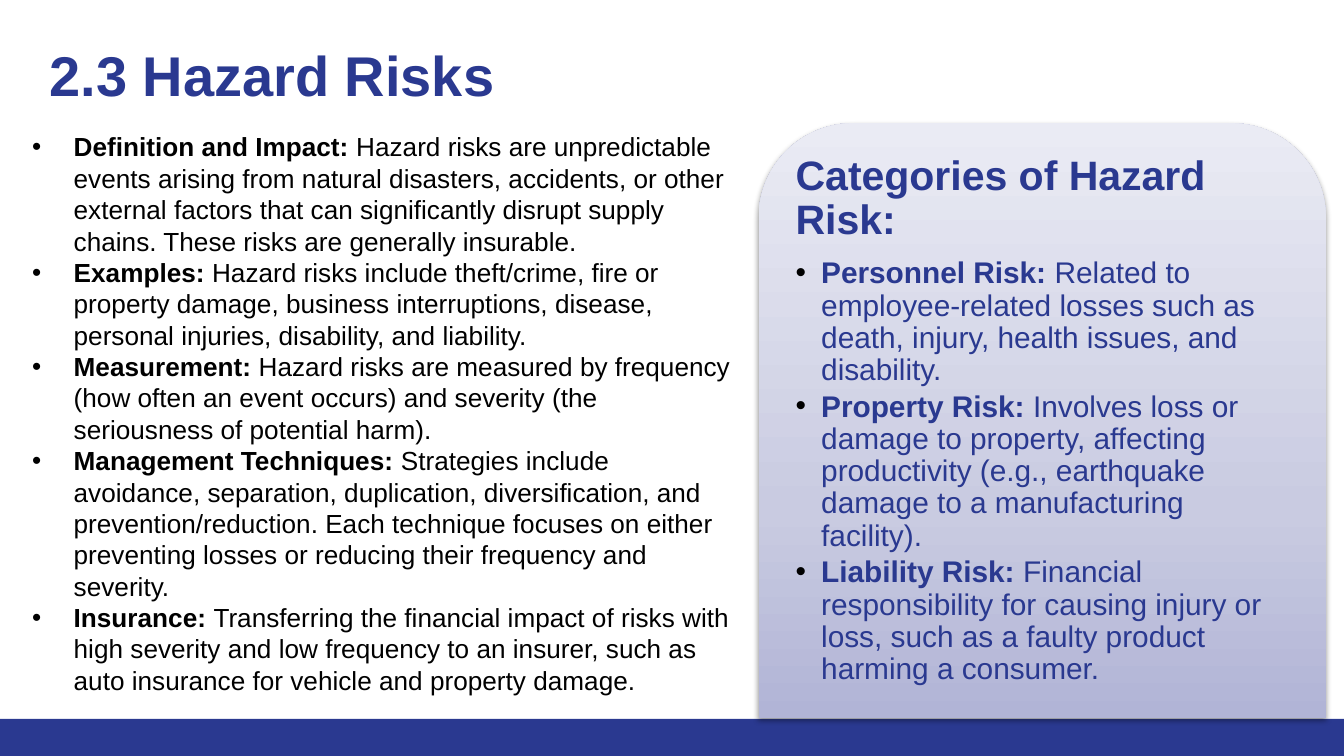
"""Build the slide on hazard risks: points on the left, a card of categories on the right."""
import copy
import pptx
import pptx.dml.color
import pptx.enum.shapes
import pptx.enum.text
import pptx.oxml
import pptx.oxml.ns
import pptx.util

HUES = {"navy": "2A3990", "black": "000000", "low": "B1B4D6", "mid": "C9CBE1", "high": "EAEBF4"}
tone = {name: pptx.dml.color.RGBColor.from_string(code) for name, code in HUES.items()}
kinds = pptx.enum.shapes.MSO_SHAPE
space = pptx.oxml.ns.nsdecls("a")

deck = pptx.Presentation()
deck.slide_width = pptx.util.Inches(10)
deck.slide_height = pptx.util.Inches(5.625)
col, row = deck.slide_width / 100, deck.slide_height / 100
slide = deck.slides.add_slide(deck.slide_layouts[6])


def place(left, top, width, height):
    return [int(n) for n in (left * col, top * row, width * col, height * row)]


def write(para, parts, size, hue, dent=0):
    if dent:
        props = para._p.get_or_add_pPr()
        props.set("marL", str(int(dent * col)))
        props.set("indent", str(int(-dent * col)))
        for mark in (f'<a:buClr {space}><a:srgbClr val="{HUES["black"]}"/></a:buClr>',
                     f'<a:buFont {space} typeface="Arial"/>', f'<a:buChar {space} char="•"/>'):
            props.append(pptx.oxml.parse_xml(mark))
    font = para.font
    font.name, font.size = "Arial", pptx.util.Pt(size)
    font.color.rgb = tone[hue]
    for spot, words in enumerate(parts):
        run = para.add_run()
        run.text = words
        run.font.bold = spot == 0


band = slide.shapes.add_shape(kinds.RECTANGLE, *place(0, 95.1, 100, 4.9))
band.shadow.inherit = False
band.fill.solid()
band.fill.fore_color.rgb = tone["navy"]
band.line.fill.background()

card = slide.shapes.add_shape(kinds.ROUND_2_SAME_RECTANGLE, *place(56.45, 16.3, 42.2, 78.7))
card.shadow.inherit = False
card.line.fill.background()
card.fill.gradient()
card.fill.gradient_angle = 90
first = card.fill.gradient_stops[0]._gs
first.addnext(copy.deepcopy(first))
for stop, hue, share in zip(card.fill.gradient_stops, ("low", "mid", "high"), (0, 0.35, 1)):
    stop.color.rgb = tone[hue]
    stop.position = share
glow = card._element.spPr.find(pptx.oxml.ns.qn("a:effectLst"))
glow.append(pptx.oxml.parse_xml(
    f'<a:outerShdw {space} blurRad="39400" dist="20300" dir="5400000" rotWithShape="0">'
    f'<a:srgbClr val="{HUES["black"]}"><a:alpha val="38000"/></a:srgbClr></a:outerShdw>'))

frames = []
for spot, pads in (((2.7, 3.6, 92, 15.8), (1, 1.7)),
                   ((1.4, 16.4, 54.1, 77.2), (1, 0.9)),
                   ((58.5, 20.1, 38.1, 74.8), (0.7, 0.4))):
    frame = slide.shapes.add_textbox(*place(*spot)).text_frame
    frame.word_wrap = True
    frame.vertical_anchor = pptx.enum.text.MSO_ANCHOR.TOP
    frame.margin_left = frame.margin_right = int(pads[0] * col)
    frame.margin_top = frame.margin_bottom = int(pads[1] * row)
    frames.append(frame)
title, body, side = frames
write(title.paragraphs[0], ["2.3 Hazard Risks"], 30, "navy")

points = [
    ("Definition and Impact: ", "Hazard risks are unpredictable events arising from natural disasters, accidents, or other external factors that can significantly disrupt supply chains. These risks are generally insurable."),
    ("Examples: ", "Hazard risks include theft/crime, fire or property damage, business interruptions, disease, personal injuries, disability, and liability."),
    ("Measurement: ", "Hazard risks are measured by frequency (how often an event occurs) and severity (the seriousness of potential harm)."),
    ("Management Techniques: ", "Strategies include avoidance, separation, duplication, diversification, and prevention/reduction. Each technique focuses on either preventing losses or reducing their frequency and severity."),
    ("Insurance: ", "Transferring the financial impact of risks with high severity and low frequency to an insurer, such as auto insurance for vehicle and property damage."),
]
for spot, parts in enumerate(points):
    para = body.add_paragraph() if spot else body.paragraphs[0]
    write(para, parts, 14, "black", 3.1)

risks = [
    ("Personnel Risk: ", "Related to employee-related losses such as death, injury, health issues, and disability."),
    ("Property Risk: ", "Involves loss or damage to property, affecting productivity (e.g., earthquake damage to a manufacturing facility)."),
    ("Liability Risk: ", "Financial responsibility for causing injury or loss, such as a faulty product harming a consumer."),
]
head = side.paragraphs[0]
head.line_spacing = 0.9
head.space_after = pptx.util.Pt(7.7)
write(head, ["Categories of Hazard Risk:"], 22, "navy")
for parts in risks:
    para = side.add_paragraph()
    para.level = 1
    para.line_spacing = 0.9
    para.space_after = pptx.util.Pt(2.4)
    write(para, parts, 16, "navy", 1.9)

deck.save("out.pptx")
